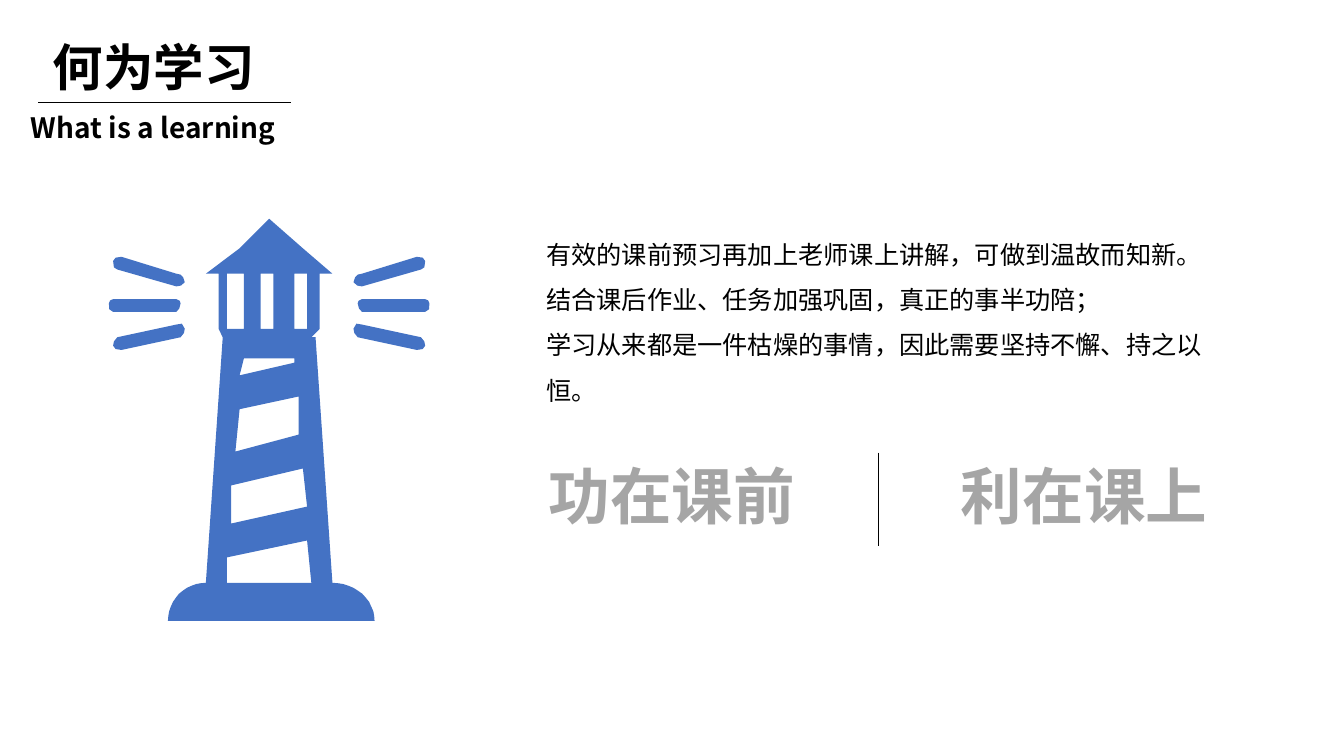
from math import cos, pi, sin

from lxml.etree import SubElement
from pptx import Presentation
from pptx.dml.color import RGBColor
from pptx.enum.shapes import MSO_CONNECTOR as Link, MSO_SHAPE as Shape
from pptx.enum.text import MSO_ANCHOR as Anchor, MSO_AUTO_SIZE as Fit, PP_ALIGN as Align
from pptx.oxml.ns import qn
from pptx.util import Inches, Pt

FONT = "Noto Sans CJK SC"
BLACK = RGBColor(0x00, 0x00, 0x00)
WHITE = RGBColor(0xFF, 0xFF, 0xFF)
GREY = RGBColor(0xA5, 0xA5, 0xA5)
BLUE = RGBColor(0x44, 0x72, 0xC4)

deck = Presentation()
deck.slide_width = Inches(13.33)
deck.slide_height = Inches(7.5)
slide = deck.slides.add_slide(deck.slide_layouts[1])
shapes = slide.shapes


def share(x, y, *more):
    """Turn percentages of the slide's width and height, in turn, into lengths."""
    sides = (deck.slide_width, deck.slide_height)
    return [int(sides[i % 2] * part / 100) for i, part in enumerate((x, y, *more))]


def write(box, lines, size, color=BLACK, bold=True, align=Align.CENTER,
          anchor=Anchor.TOP, space=1):
    frame = box.text_frame
    frame.word_wrap = True
    frame.auto_size = Fit.SHAPE_TO_FIT_TEXT
    frame.vertical_anchor = anchor
    for i, line in enumerate(lines):
        para = frame.add_paragraph() if i else frame.paragraphs[0]
        props = para._p.get_or_add_pPr()
        props.set("marL", "0")
        props.set("indent", "0")
        SubElement(props, qn("a:buNone"))
        para.alignment = align
        para.line_spacing = space
        para.space_before = Pt(0)
        run = para.add_run()
        run.text = line
        font = run.font
        font.name, font.size, font.bold = FONT, Pt(size), bold
        font.color.rgb = color
        SubElement(run._r.get_or_add_rPr(), qn("a:ea"), typeface=FONT)


# Heading
title = shapes.title
title.left, title.top, title.width, title.height = share(2.85, 4.13, 17.18, 9.47)
write(title, ["何为学习"], 36)
write(shapes.add_textbox(*share(-0.68, 14, 24.15, 5.87)), ["What is a learning"], 20)

# Rule under the heading and divider between the slogans
for ends in ((2.85, 13.6, 21.68, 13.6), (65.33, 59.87, 65.33, 72.27)):
    rule = shapes.add_connector(Link.STRAIGHT, *share(*ends))
    rule.line.color.rgb = BLACK
    rule.line.width = Pt(0.5)
    SubElement(rule._element.spPr, qn("a:effectLst"))

# Lighthouse on a grid of 76 columns and 95 rows
COLS, ROWS, FINE = 76, 95, 10
turns = [pi / 2 * i / 12 for i in range(13)]
tower = [(27, 28), (26, 26), (26, 13), (23, 13), (31, 7), (38, 0), (46, 7),
         (53, 13), (50, 13), (50, 26), (48, 28), (49, 28)]
tower += [(53 + 10 * sin(t), 95 - 9 * cos(t)) for t in turns]
tower += [(23 - 9 * cos(t), 95 - 9 * sin(t)) for t in turns]
panes = [[(a, 13), (b, 13), (b, 26), (a, 26)] for a, b in ((28, 32), (36, 39), (44, 47))]
bands = [
    [(31, 37), (44, 34), (44, 33), (32, 33)],
    [(45, 42), (31, 45), (30, 55), (45, 51)],
    [(46, 59), (29, 63), (29, 72), (47, 68)],
    [(28, 86), (48, 86), (47, 76), (28, 80)],
]
beams = [
    [(16, 16), (17.1, 15.8), (18, 15), (17.6, 13.8), (17, 13.2), (16, 13),
     (3, 9), (1.6, 9.2), (1, 10), (1.2, 11.5), (2, 12)],
    [(16, 22), (16.7, 21.2), (17, 20), (16.8, 19.4), (16, 19),
     (1, 19), (0.3, 19.3), (0, 20), (0.1, 21.4), (1, 22)],
    [(17, 28), (17.8, 27), (18, 26), (17.3, 24.8), (16, 25),
     (2, 28), (1.2, 29), (1, 30), (1.6, 30.8), (3, 31)],
]
mirror = [[(COLS - x, y) for x, y in beam] for beam in beams]

left, top, wide, high = share(8.1, 28.93, 23.85, 53.2)
pen = None
for path in [tower, *panes, *bands, *beams, *mirror]:
    first, *rest = [(x * FINE, y * FINE) for x, y in path]
    if pen is None:
        pen = shapes.build_freeform(*first, scale=(wide / COLS / FINE, high / ROWS / FINE))
    else:
        pen.move_to(*first)
    pen.add_line_segments(rest, close=True)
house = pen.convert_to_shape(left, top)
house.shadow.inherit = False
house.fill.solid()
house.fill.fore_color.rgb = BLUE
house.line.fill.background()

# Slogans
for x, words in ((39.9, "功在课前"), (70.58, "利在课上")):
    card = shapes.add_shape(Shape.RECTANGLE, *share(x, 59.87, 20.18, 11.2))
    card.shadow.inherit = False
    card.fill.solid()
    card.fill.fore_color.rgb = WHITE
    card.line.fill.background()
    write(card, [words], 44, GREY, anchor=Anchor.MIDDLE)

# Body text
body = slide.placeholders[1]
body.left, body.top, body.width, body.height = share(39.9, 28.93, 51.98, 24.93)
write(body, [
    "有效的课前预习再加上老师课上讲解，可做到温故而知新。结合课后作业、任务加强巩固，真正的事半功陪；",
    "学习从来都是一件枯燥的事情，因此需要坚持不懈、持之以恒。",
], 18, bold=False, align=Align.LEFT, space=1.5)

deck.save("out.pptx")
